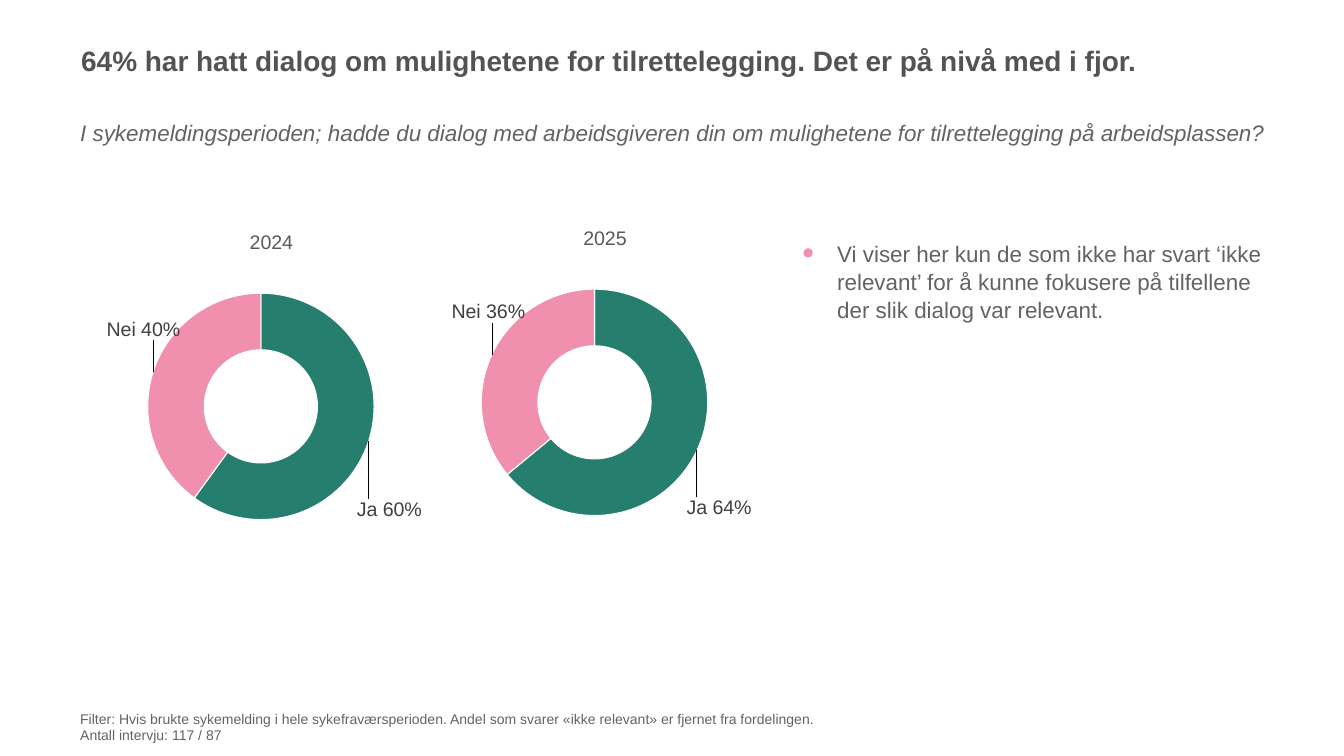
from lxml import etree
from pptx import Presentation
from pptx.chart.data import CategoryChartData
from pptx.dml.color import RGBColor
from pptx.enum.chart import XL_CHART_TYPE
from pptx.oxml import parse_xml
from pptx.oxml.ns import nsdecls, qn
from pptx.util import Pt

GREY = RGBColor(0x62, 0x63, 0x62)
TITLE_GREY = RGBColor(0x53, 0x53, 0x53)
CHART_GREY = RGBColor(0x59, 0x59, 0x59)
LABEL_GREY = RGBColor(0x40, 0x40, 0x40)
GREEN = RGBColor(0x26, 0x7E, 0x6F)
PINK = RGBColor(0xF1, 0x90, 0xAE)
WHITE = RGBColor(0xFF, 0xFF, 0xFF)

prs = Presentation()
prs.slide_width, prs.slide_height = Pt(1920), Pt(1080)
slide = prs.slides.add_slide(prs.slide_layouts[6])


def add_text(x, y, w, h, text, size, color):
    tf = slide.shapes.add_textbox(Pt(x), Pt(y), Pt(w), Pt(h)).text_frame
    tf.word_wrap = True
    tf.margin_left = tf.margin_right = tf.margin_top = tf.margin_bottom = Pt(4.3)
    tf.text = text
    for p in tf.paragraphs:
        for r in p.runs:
            r.font.name = "Arial"
            r.font.size = Pt(size)
            r.font.color.rgb = color
    return tf


def set_layout(parent, index, extra="", **fractions):
    """Place a chart part by fractions of the chart's size."""
    for old in parent.findall(qn("c:layout")):
        parent.remove(old)
    values = "".join(f'<c:{k} val="{v}"/>' for k, v in fractions.items())
    parent.insert(index, parse_xml(
        f'<c:layout {nsdecls("c")}><c:manualLayout>{extra}{values}'
        '</c:manualLayout></c:layout>'))


title = add_text(111.6, 58, 1703.5, 88,
                 "64% har hatt dialog om mulighetene for tilrettelegging. "
                 "Det er på nivå med i fjor.", 40, TITLE_GREY)
title.paragraphs[0].runs[0].font.bold = True

question = add_text(110.2, 166.3, 1740, 116.6,
                    "I sykemeldingsperioden; hadde du dialog med arbeidsgiveren din "
                    "om mulighetene for tilrettelegging på arbeidsplassen?", 32, GREY)
question.paragraphs[0].runs[0].font.italic = True

EDGES = '<c:xMode val="edge"/><c:yMode val="edge"/>'
# year, left, top, shares of Ja and Nei, label offsets of Ja and Nei
charts = [
    ("2024", 110.2, 312.5, (0.60, 0.40), ((0.13, 0.2), (-0.1, -0.13))),
    ("2025", 586.8, 306.7, (0.64, 0.36), ((0.13, 0.18), (-0.08, -0.14))),
]
for year, x, y, shares, offsets in charts:
    data = CategoryChartData(number_format="0%")
    data.categories = ["Ja", "Nei"]
    data.add_series("Series 1", shares)
    chart = slide.shapes.add_chart(XL_CHART_TYPE.DOUGHNUT, Pt(x), Pt(y),
                                   Pt(525), Pt(550), data).chart
    chart.font.name = "Arial"
    chart.font.size = Pt(10)
    chart.has_legend = False
    chart.has_title = True
    tf = chart.chart_title.text_frame
    tf.text = year
    font = tf.paragraphs[0].runs[0].font
    font.name, font.size, font.bold = "Arial", Pt(28), False
    font.color.rgb = CHART_GREY
    set_layout(chart.chart_title._element, 1, EDGES, x=0.46, y=0.02)

    plot = chart.plots[0]
    plot.vary_by_categories = True
    plot._element.find(qn("c:holeSize")).set("val", "60")
    set_layout(plot._element.getparent(), 0, '<c:layoutTarget val="inner"/>' + EDGES,
               x=0.192, y=0.065, w=0.616, h=0.845)

    series = plot.series[0]
    labels = series.data_labels
    labels.show_value = labels.show_category_name = True
    labels.number_format, labels.number_format_is_linked = "0%", False
    fonts = [labels.font]
    for i, color in enumerate((GREEN, PINK)):
        point = series.points[i]
        point.format.fill.solid()
        point.format.fill.fore_color.rgb = color
        point.format.line.color.rgb = WHITE
        point.format.line.width = Pt(1.5)
        fonts.append(point.data_label.font)
    for font in fonts:
        font.name, font.size = "Arial", Pt(28)
        font.color.rgb = LABEL_GREY
    for label, (dx, dy) in zip(series._element.xpath(".//c:dLbl"), offsets):
        set_layout(label, 1, x=dx, y=dy)
        label.insert(2, parse_xml(
            f'<c:numFmt {nsdecls("c")} formatCode="0%" sourceLinked="0"/>'))
        label.find(qn("c:showCatName")).set("val", "1")
        label.find(qn("c:txPr")).find(qn("a:bodyPr")).set("wrap", "none")
        separator = etree.Element(qn("c:separator"))
        separator.text = " "
        label.find(qn("c:showBubbleSize")).addnext(separator)

comment = add_text(1141.9, 336.2, 673.2, 645,
                   "Vi viser her kun de som ikke har svart ‘ikke relevant’ for å kunne "
                   "fokusere på tilfellene der slik dialog var relevant.", 32, GREY)
p = comment.paragraphs[0]
p.line_spacing = 1.05
pPr = p._p.get_or_add_pPr()
pPr.set("marL", str(Pt(49.7)))
pPr.set("indent", str(-Pt(49.7)))
for bullet in (f'<a:buClr {nsdecls("a")}><a:srgbClr val="{PINK}"/></a:buClr>',
               f'<a:buSzPct {nsdecls("a")} val="150000"/>',
               f'<a:buFont {nsdecls("a")} typeface="Arial"/>',
               f'<a:buChar {nsdecls("a")} char="•"/>'):
    pPr.append(parse_xml(bullet))

add_text(110.2, 1010.2, 1682, 57.6,
         "Filter: Hvis brukte sykemelding i hele sykefraværsperioden. "
         "Andel som svarer «ikke relevant» er fjernet fra fordelingen.\n"
         "Antall intervju: 117 / 87", 20, GREY)

prs.save("out.pptx")
